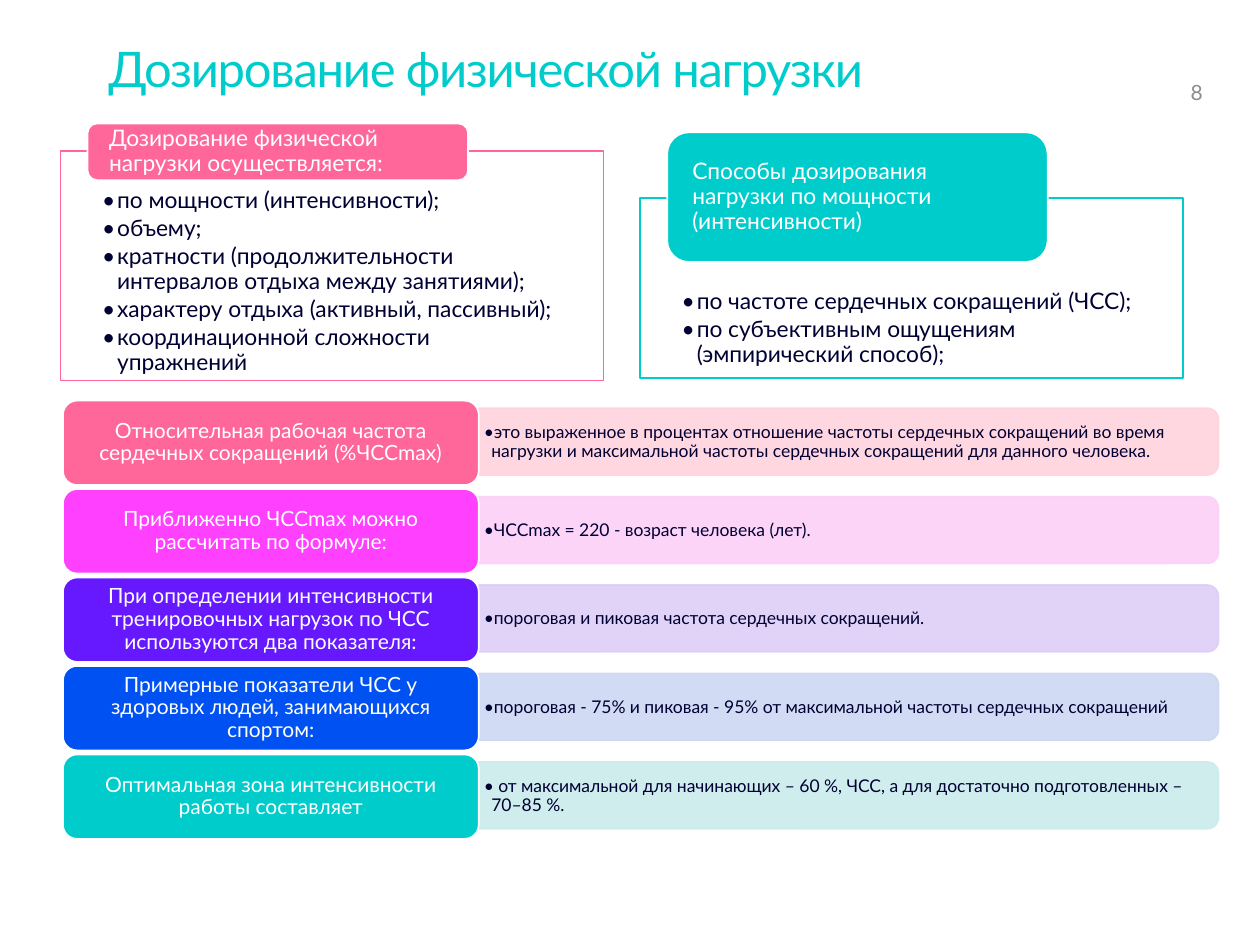
from lxml.etree import SubElement
from pptx import Presentation
from pptx.dml.color import RGBColor
from pptx.enum.shapes import MSO_SHAPE as Preset
from pptx.enum.text import MSO_ANCHOR as Anchor, MSO_AUTO_SIZE as AutoSize, PP_ALIGN as Align
from pptx.oxml.ns import qn
from pptx.util import Inches, Pt

COLUMNS, ROWS = 100, 75
FONT = "Lato"
WHITE = RGBColor(0xFF, 0xFF, 0xFF)
NAVY = RGBColor(0x00, 0x00, 0x33)
GRAY = RGBColor(0x8C, 0x8C, 0x90)
TEAL = RGBColor(0x00, 0xCC, 0xCC)
PINK = RGBColor(0xFF, 0x66, 0x99)
MAGENTA = RGBColor(0xFF, 0x40, 0xFF)
VIOLET = RGBColor(0x66, 0x19, 0xFF)
BLUE = RGBColor(0x00, 0x51, 0xF2)
PALE_PINK = RGBColor(0xFF, 0xD3, 0xDE)
PALE_MAGENTA = RGBColor(0xFC, 0xD0, 0xF8)
PALE_VIOLET = RGBColor(0xDE, 0xCE, 0xF7)
PALE_BLUE = RGBColor(0xCC, 0xD8, 0xF2)
PALE_TEAL = RGBColor(0xCB, 0xEC, 0xEC)

PANELS = [
    dict(left=4.8, top=12, height=18.2, color=PINK, inset=3,
         label="Дозирование физической нагрузки осуществляется:",
         label_top=9.8, label_height=4.5,
         items=["по мощности (интенсивности);",
                "объему;",
                "кратности (продолжительности интервалов отдыха между занятиями);",
                "характеру отдыха (активный, пассивный);",
                "координационной сложности упражнений"]),
    dict(left=50.8, top=15.7, height=14.3, color=TEAL, inset=7.3,
         label="Способы дозирования нагрузки по мощности (интенсивности)",
         label_top=10.5, label_height=10.3,
         items=["по частоте сердечных сокращений (ЧСС);",
                "по субъективным ощущениям (эмпирический способ);"]),
]

DEFINITIONS = [
    ("Относительная рабочая частота сердечных сокращений (%ЧССmax)",
     "это выраженное в процентах отношение частоты сердечных сокращений во время "
     "нагрузки и максимальной частоты сердечных сокращений для данного человека.",
     PINK, PALE_PINK),
    ("Приближенно ЧССmax можно рассчитать по формуле:",
     "ЧССmax = 220 - возраст человека (лет).",
     MAGENTA, PALE_MAGENTA),
    ("При определении интенсивности тренировочных нагрузок по ЧСС используются два показателя:",
     "пороговая и пиковая частота сердечных сокращений.",
     VIOLET, PALE_VIOLET),
    ("Примерные показатели ЧСС у здоровых людей, занимающихся спортом:",
     "пороговая - 75% и пиковая - 95% от максимальной частоты сердечных сокращений",
     BLUE, PALE_BLUE),
    ("Оптимальная зона интенсивности работы составляет",
     " от максимальной для начинающих – 60 %, ЧСС, а для достаточно подготовленных – 70–85 %.",
     TEAL, PALE_TEAL),
]


def write(shape, lines, size, color, align=Align.LEFT, anchor=Anchor.MIDDLE,
          insets=(0, 0, 0, 0), spacing=0.9, after=0, bullet_indent=None):
    frame = shape.text_frame
    frame.word_wrap = True
    frame.auto_size = AutoSize.NONE
    frame.vertical_anchor = anchor
    (frame.margin_left, frame.margin_top,
     frame.margin_right, frame.margin_bottom) = map(Inches, insets)
    for index, line in enumerate(lines):
        paragraph = frame.add_paragraph() if index else frame.paragraphs[0]
        paragraph.alignment = align
        paragraph.line_spacing = spacing
        paragraph.space_before = Pt(0)
        paragraph.space_after = Pt(after)
        if bullet_indent:
            properties = paragraph._p.get_or_add_pPr()
            properties.set("marL", str(Inches(bullet_indent)))
            properties.set("indent", str(-Inches(bullet_indent)))
            SubElement(properties, qn("a:buFont")).set("typeface", FONT)
            SubElement(properties, qn("a:buChar")).set("char", "•")
        run = paragraph.add_run()
        run.text = line
        run.font.name = FONT
        run.font.size = Pt(size)
        run.font.color.rgb = color


class SlideBuilder:
    def __init__(self, presentation):
        self.column = presentation.slide_width / COLUMNS
        self.row = presentation.slide_height / ROWS
        self.slide = presentation.slides.add_slide(presentation.slide_layouts[5])

    def place(self, left, top, width, height):
        return (round(left * self.column), round(top * self.row),
                round(width * self.column), round(height * self.row))

    def title(self, text, *area):
        shape = self.slide.shapes.title
        shape.left, shape.top, shape.width, shape.height = self.place(*area)
        write(shape, [text], 28, TEAL, anchor=Anchor.TOP,
              insets=(0, 0.05, 0, 0.05), spacing=Pt(32))
        shape.text_frame.paragraphs[0].runs[0]._r.get_or_add_rPr().set("spc", "-70")

    def text(self, lines, *area, **style):
        write(self.slide.shapes.add_textbox(*self.place(*area)), lines, **style)

    def shape(self, preset, *area, fill, line, opacity=100):
        shape = self.slide.shapes.add_shape(preset, *self.place(*area))
        shape.shadow.inherit = False
        shape.fill.solid()
        shape.fill.fore_color.rgb = fill
        shape.line.color.rgb = line
        shape.line.width = Pt(1)
        if opacity < 100:
            for color in shape._element.spPr.iter(qn("a:srgbClr")):
                SubElement(color, qn("a:alpha")).set("val", str(opacity * 1000))
        return shape

    def label(self, text, *area, fill, **style):
        shape = self.shape(Preset.ROUNDED_RECTANGLE, *area, fill=fill, line=WHITE)
        write(shape, [text], color=WHITE, **style)

    def band(self, left, top, width, height, color):
        middle, center = left + width / 2, top + height / 2
        shape = self.shape(Preset.ROUND_2_SAME_RECTANGLE, middle - height / 2,
                           center - width / 2, height, width,
                           fill=color, line=color, opacity=90)
        shape.rotation = 90

    def panel(self, left, top, height, color, inset, label, label_top, label_height, items):
        box = self.shape(Preset.RECTANGLE, left, top, 43.1, height, fill=WHITE, line=color)
        write(box, items, 13, NAVY, anchor=Anchor.TOP, after=2,
              insets=(0.33, inset / 10, 0.33, 0.1), bullet_indent=0.12)
        self.label(label, left + 2.15, label_top, 30.2, label_height, fill=color,
                   size=13, insets=(0.15, 0, 0.15, 0))

    def definition(self, top, term, meaning, color, pale):
        self.band(38, top + 0.6, 58.7, 5.3, pale)
        self.text([meaning], 38, top + 0.9, 58.5, 4.8, size=10, color=NAVY, after=1.5,
                  insets=(0.04, 0.02, 0.04, 0.02), bullet_indent=0.06)
        self.label(term, 5, top, 33, 6.7, fill=color, size=12, align=Align.CENTER,
                   insets=(0.08, 0.06, 0.08, 0.06))


def main():
    presentation = Presentation()
    presentation.slide_width, presentation.slide_height = Inches(10), Inches(7.5)
    builder = SlideBuilder(presentation)
    builder.title("Дозирование физической нагрузки", 8.6, 2.8, 86.2, 7.2)
    builder.text(["8"], 94.5, 4, 3.8, 4.7, size=12, color=GRAY, anchor=Anchor.BOTTOM,
                 insets=(0, 0.04, 0, 0.04), spacing=1)
    for panel in PANELS:
        builder.panel(**panel)
    for index, definition in enumerate(DEFINITIONS):
        builder.definition(31.8 + 7.02 * index, *definition)
    presentation.save("out.pptx")


if __name__ == "__main__":
    main()
